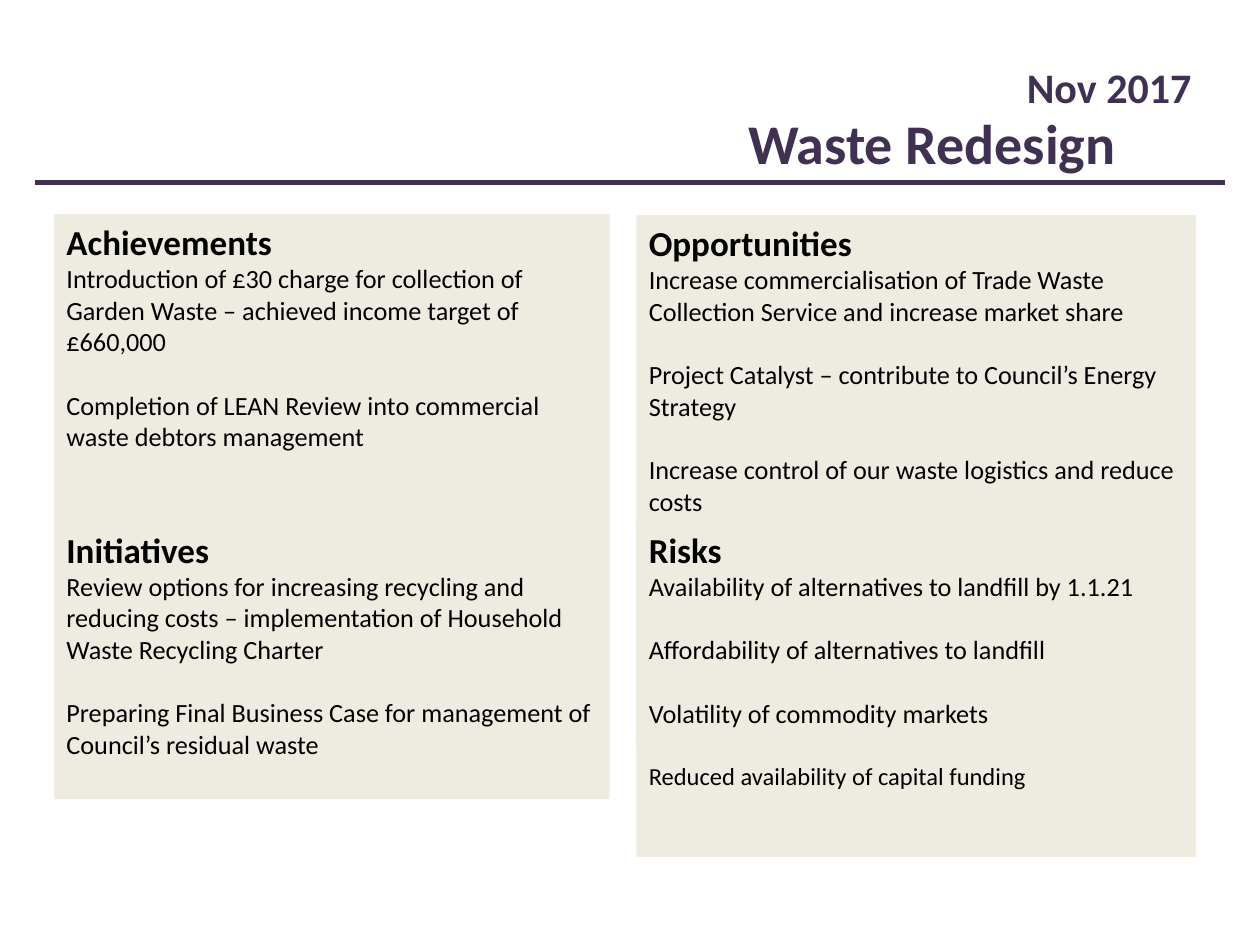
from pptx import Presentation
from pptx.dml.color import RGBColor as Rgb
from pptx.enum.shapes import MSO_CONNECTOR as Link, MSO_SHAPE as Form
from pptx.enum.text import MSO_ANCHOR as Anchor, PP_ALIGN as Align
from pptx.oxml.ns import qn
from pptx.util import Cm, Pt
from lxml.etree import SubElement

HUES = {"plum": "403152", "sand": "EEECE1", "ink": "000000"}
HEAD = {"size": Pt(20), "bold": True}
BODY = {"size": Pt(15), "bold": False}
SMALL = {"size": Pt(14), "bold": False}
GAP = Pt(18.3)

PANELS = [
    ((12.83, 4.34, 11.28, 10.77), "Opportunities", [
        ("Increase commercialisation of Trade Waste Collection Service "
         "and increase market share", BODY),
        ("Project Catalyst – contribute to Council’s Energy Strategy", BODY),
        ("Increase control of our waste logistics and reduce costs", BODY)]),
    ((1.09, 4.32, 11.2, 8.56), "Achievements", [
        ("Introduction of £30 charge for collection of Garden Waste "
         "– achieved income target of £660,000", BODY),
        ("Completion of LEAN Review into commercial waste debtors "
         "management", BODY)]),
    ((1.09, 10.52, 11.2, 5.59), "Initiatives", [
        ("Review options for increasing recycling and reducing costs "
         "– implementation of Household Waste Recycling Charter", BODY),
        ("Preparing Final Business Case for management of Council’s "
         "residual waste", BODY)]),
    ((12.83, 10.52, 11.28, 6.76), "Risks", [
        ("Availability of alternatives to landfill by 1.1.21", BODY),
        ("Affordability of alternatives to landfill", BODY),
        ("Volatility of commodity markets", BODY),
        ("Reduced availability of capital funding", SMALL)]),
]


class Deck:
    def __init__(self, face):
        self.face = face
        self.prs = Presentation()
        self.prs.slide_width, self.prs.slide_height = Cm(25.4), Cm(19.05)
        self.slide = self.prs.slides.add_slide(self.prs.slide_layouts[6])

    def hue(self, name):
        return Rgb.from_string(HUES[name])

    def put(self, para, text, style, hue):
        para.alignment = Align.LEFT
        run = para.add_run()
        run.text = text
        for key, value in {"name": self.face, **style}.items():
            setattr(run.font, key, value)
        run.font.color.rgb = self.hue(hue)

    def label(self, box, text, size):
        frame = self.slide.shapes.add_textbox(*map(Cm, box)).text_frame
        frame.word_wrap = True
        frame.margin_right = 0
        style = {"size": Pt(size), "bold": True}
        self.put(frame.paragraphs[0], text, style, "plum")

    def rule(self, left, right, top):
        line = self.slide.shapes.add_connector(
            Link.STRAIGHT, Cm(left), Cm(top), Cm(right), Cm(top))
        line.line.color.rgb = self.hue("plum")
        line.line.width = Pt(2.5)
        SubElement(line._element.spPr, qn("a:effectLst"))

    def panel(self, box, head, items):
        shape = self.slide.shapes.add_shape(Form.RECTANGLE, *map(Cm, box))
        shape.shadow.inherit = False
        shape.fill.solid()
        shape.fill.fore_color.rgb = self.hue("sand")
        shape.line.fill.background()
        frame = shape.text_frame
        for key, value in {"word_wrap": True,
                           "vertical_anchor": Anchor.TOP}.items():
            setattr(frame, key, value)
        self.put(frame.paragraphs[0], head, HEAD, "ink")
        for rank, (text, style) in enumerate(items):
            para = frame.add_paragraph()
            if rank:
                para.space_before = GAP
            self.put(para, text, style, "ink")


def main():
    deck = Deck("Calibri")
    deck.label((14.83, 2.06, 8.26, 1.63), "Waste Redesign", 32)
    deck.rule(0.71, 24.69, 3.68)
    deck.label((20.45, 1.12, 3.86, 1.27), "Nov 2017", 24)
    for panel in PANELS:
        deck.panel(*panel)
    deck.prs.save("out.pptx")


if __name__ == "__main__":
    main()
